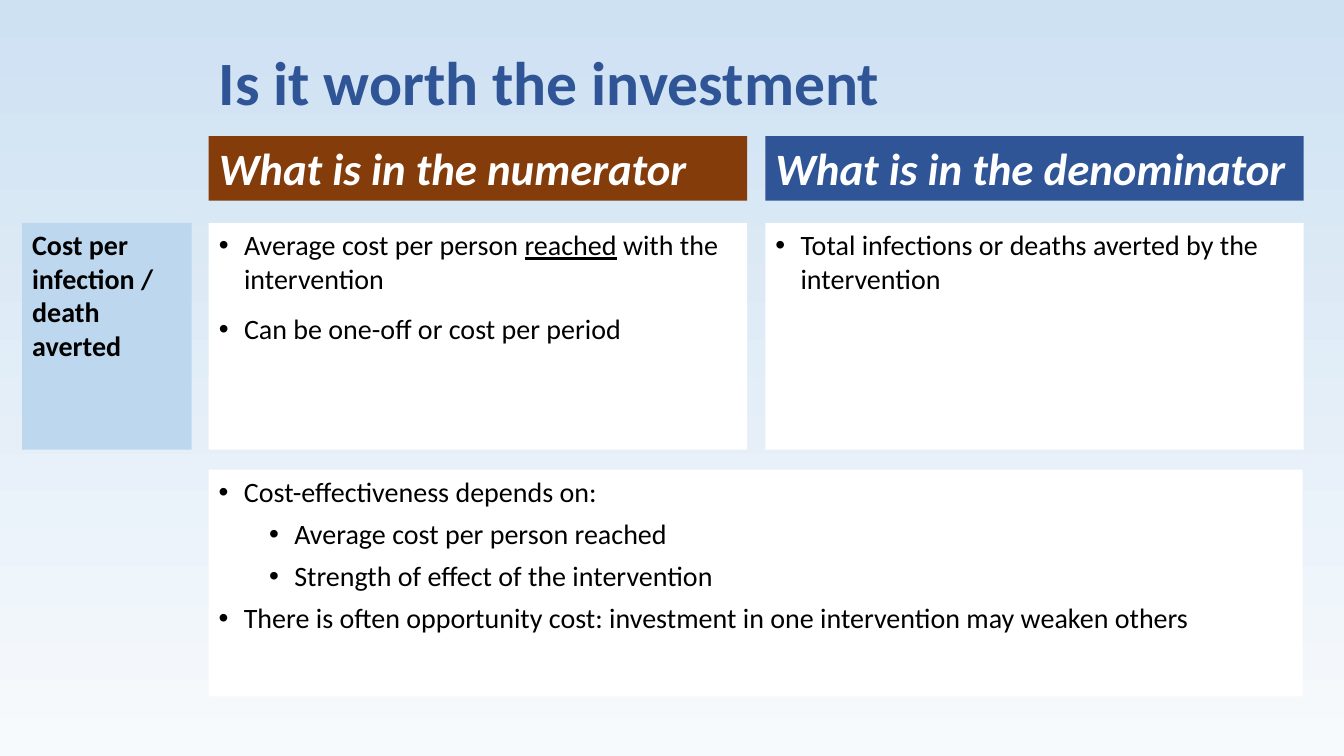
"""Build the slide on what goes into cost per infection or death averted."""
from dataclasses import dataclass
from typing import Optional

import pptx
import pptx.dml.color
import pptx.enum.text
import pptx.oxml
import pptx.oxml.ns
import pptx.util

Inches = pptx.util.Inches
Pt = pptx.util.Pt
Anchor = pptx.enum.text.MSO_ANCHOR

COLORS = {
    "bg_bottom": "F7FAFD", "bg_top": "CEE1F2", "blue": "2F5597", "brown": "843C0B",
    "pale_blue": "BDD7EE", "white": "FFFFFF", "black": "000000",
}
LABEL_X, LEFT_X, RIGHT_X = 0.22, 2.07, 7.59
COL_W, FULL_W = 5.34, 10.85
HEAD_Y, ROW_Y, NOTE_Y = 1.35, 2.21, 4.66
HEAD_H, ROW_H = 0.64, 2.25


@dataclass(frozen=True)
class Run:
    text: str
    underline: bool = False


@dataclass(frozen=True)
class Para:
    runs: tuple[Run, ...]
    level: int = 0


@dataclass(frozen=True)
class Style:
    size: int
    color: str
    bold: bool = False
    italic: bool = False
    bullet: bool = False
    spacing: float = 1.0
    before: int = 0
    after: int = 0
    anchor: Anchor = Anchor.TOP


@dataclass(frozen=True)
class Box:
    at: tuple[float, float, float, float]
    style: Style
    paras: tuple[Para, ...]
    fill: Optional[str] = None
    placeholder: Optional[int] = None


def para(text: str, level: int = 0) -> Para:
    """Return a paragraph of a single plain run."""
    return Para((Run(text),), level)


TITLE = Style(44, "blue", bold=True, spacing=0.9, anchor=Anchor.MIDDLE)
HEAD = Style(32, "white", bold=True, italic=True, spacing=0.9, before=10, anchor=Anchor.BOTTOM)
LABEL = Style(20, "black", bold=True, after=12)
LIST = Style(20, "black", bullet=True, after=12)
NOTES = Style(20, "black", bullet=True, after=6)

BOXES = (
    Box((LEFT_X, 0.4, 10.34, 0.9), TITLE, (para("Is it worth the investment"),), placeholder=0),
    Box((LEFT_X, HEAD_Y, COL_W, HEAD_H), HEAD,
        (para("What is in the numerator"),), "brown", 1),
    Box((RIGHT_X, HEAD_Y, COL_W, HEAD_H), HEAD,
        (para("What is in the denominator"),), "blue", 3),
    Box((LABEL_X, ROW_Y, 1.68, ROW_H), LABEL,
        (para("Cost per infection / death averted"),), "pale_blue"),
    Box((LEFT_X, ROW_Y, COL_W, ROW_H), LIST, (
        Para((Run("Average cost per person "), Run("reached", True),
              Run(" with the intervention"))),
        para("Can be one-off or cost per period"),
    ), "white", 2),
    Box((RIGHT_X, ROW_Y, COL_W, ROW_H), LIST,
        (para("Total infections or deaths averted by the intervention"),), "white", 4),
    Box((LEFT_X, NOTE_Y, FULL_W, ROW_H), NOTES, (
        para("Cost-effectiveness depends on:"),
        para("Average cost per person reached", 1),
        para("Strength of effect of the intervention", 1),
        para("There is often opportunity cost: investment in one intervention "
             "may weaken others"),
    ), "white"),
)


def rgb(name: str) -> pptx.dml.color.RGBColor:
    """Return the named colour."""
    return pptx.dml.color.RGBColor.from_string(COLORS[name])


def set_bullet(p, level: int, bullet: bool) -> None:
    """Give a paragraph its indent and its bullet, or neither."""
    pPr = p._p.get_or_add_pPr()
    pPr.set("marL", str(Inches(0.25 + 0.5 * level if bullet else 0)))
    pPr.set("indent", str(Inches(-0.25 if bullet else 0)))
    names = (("a:buFont", "typeface", "Arial"), ("a:buChar", "char", "•"))
    for tag, key, value in names if bullet else (("a:buNone", "", ""),):
        mark = pptx.oxml.ns.qn(tag)
        element = pPr.makeelement(mark, {key: value} if key else {})
        pPr.append(element)


def add_para(p, content: Para, style: Style) -> None:
    """Write one paragraph run by run."""
    p.level = content.level
    p.alignment = pptx.enum.text.PP_ALIGN.LEFT
    p.line_spacing = style.spacing
    p.space_before, p.space_after = Pt(style.before), Pt(style.after)
    set_bullet(p, content.level, style.bullet)
    for item in content.runs:
        r = p.add_run()
        r.text = item.text
        r.font.name, r.font.size = "Calibri", Pt(style.size)
        r.font.bold, r.font.italic = style.bold, style.italic
        r.font.underline = item.underline
        r.font.color.rgb = rgb(style.color)


def add_box(s, box: Box) -> None:
    """Place one box and fill it with its paragraphs."""
    left, top, width, height = (Inches(v) for v in box.at)
    if box.placeholder is None:
        sp = s.shapes.add_textbox(left, top, width, height)
    else:
        sp = s.placeholders[box.placeholder]
        sp.left, sp.top, sp.width, sp.height = left, top, width, height
    if box.fill:
        sp.fill.solid()
        sp.fill.fore_color.rgb = rgb(box.fill)
    tf = sp.text_frame
    tf.word_wrap = True
    tf.auto_size = pptx.enum.text.MSO_AUTO_SIZE.NONE
    tf.vertical_anchor = box.style.anchor
    for i, content in enumerate(box.paras):
        add_para(tf.add_paragraph() if i else tf.paragraphs[0], content, box.style)


def set_background(s) -> None:
    """Fill the background with a gradient from bottom to top."""
    fill = s.background.fill
    fill.gradient()
    fill.gradient_angle = 90
    for stop, name, position in zip(fill.gradient_stops, ("bg_bottom", "bg_top"), (0, 1)):
        stop.color.rgb = rgb(name)
        stop.position = position


def main() -> None:
    """Build and save the slide."""
    prs = pptx.Presentation()
    prs.slide_width, prs.slide_height = Inches(13.33), Inches(7.5)
    s = prs.slides.add_slide(prs.slide_layouts.get_by_name("Comparison"))
    set_background(s)
    for box in BOXES:
        add_box(s, box)
    prs.save("out.pptx")


if __name__ == "__main__":
    main()
